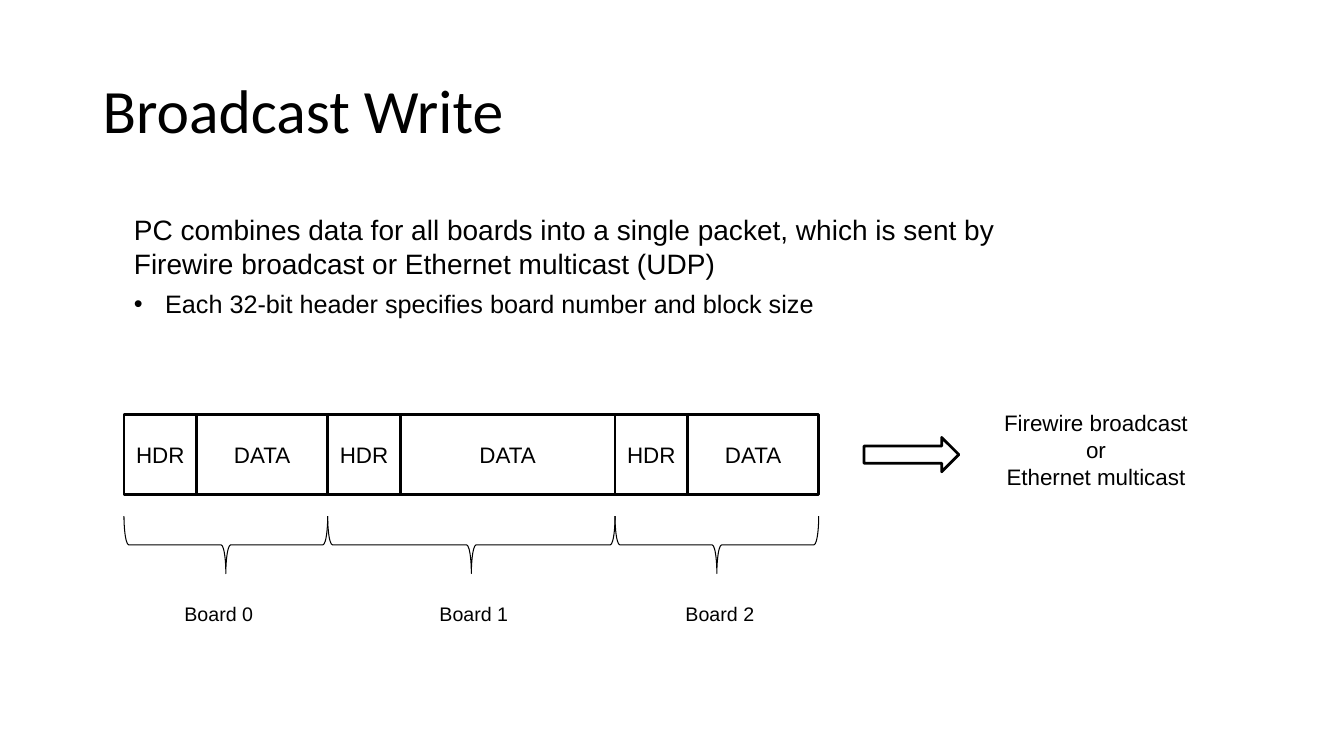
from dataclasses import dataclass

from lxml import etree
from pptx import Presentation
from pptx.dml.color import RGBColor
from pptx.enum.shapes import MSO_SHAPE
from pptx.enum.text import MSO_ANCHOR, PP_ALIGN
from pptx.oxml.ns import qn
from pptx.util import Pt

RECTANGLE, BRACE, ARROW = MSO_SHAPE.RECTANGLE, MSO_SHAPE.LEFT_BRACE, MSO_SHAPE.RIGHT_ARROW
LEFT, CENTER = PP_ALIGN.LEFT, PP_ALIGN.CENTER
TOP, MIDDLE = MSO_ANCHOR.TOP, MSO_ANCHOR.MIDDLE

TITLE = "Broadcast Write"
SUMMARY = (
    "PC combines data for all boards into a single packet, which is sent by "
    "Firewire broadcast or Ethernet multicast (UDP)"
)
DETAIL = "Each 32-bit header specifies board number and block size"
BOARDS = [
    {"name": "Board 0", "data_width": 130, "label_left": 173},
    {"name": "Board 1", "data_width": 213, "label_left": 426},
    {"name": "Board 2", "data_width": 130, "label_left": 670},
]
DESTINATION = ["Firewire broadcast", "or", "Ethernet multicast"]

PX = 9144
PAGE_WIDTH, PAGE_HEIGHT = 1333, 750
PACKET_LEFT, PACKET_TOP, PACKET_HEIGHT = 123, 411, 80
HEADER_WIDTH = 72
BRACE_TOP, BRACE_DEPTH = 512, 57
LABEL_TOP, LABEL_WIDTH, LABEL_HEIGHT = 592, 108, 34
BULLET_INDENT = 31


@dataclass(frozen=True)
class Theme:
    ink: RGBColor = RGBColor(0, 0, 0)
    paper: RGBColor = RGBColor(255, 255, 255)
    title_font: str = "Calibri"
    body_font: str = "Arial"
    title_size: int = 44
    summary_size: int = 20
    detail_size: int = 18
    packet_size: int = 16
    label_size: int = 14
    heavy_line: float = 2
    fine_line: float = 0.75


THEME = Theme()


def write(paragraph, text, size, font=THEME.body_font, align=LEFT, before=0, spacing=1.0):
    paragraph.alignment = align
    paragraph.space_before = Pt(before)
    paragraph.line_spacing = spacing
    span = paragraph.add_run()
    span.text = text
    span.font.size = Pt(size)
    span.font.name = font
    span.font.color.rgb = THEME.ink


def add_bullet(paragraph):
    properties = paragraph._p.get_or_add_pPr()
    properties.set("marL", str(BULLET_INDENT * PX))
    properties.set("indent", str(-BULLET_INDENT * PX))
    etree.SubElement(properties, qn("a:buFont"), typeface=THEME.body_font)
    etree.SubElement(properties, qn("a:buChar"), char="•")


def add_text(page, bounds, lines, size, anchor=TOP, **style):
    box = page.shapes.add_textbox(*(value * PX for value in bounds))
    frame = box.text_frame
    frame.word_wrap = True
    frame.vertical_anchor = anchor
    for index, line in enumerate(lines):
        paragraph = frame.add_paragraph() if index else frame.paragraphs[0]
        write(paragraph, line, size, **style)
    return frame


def add_outline(page, kind, bounds, weight, filled=True):
    shape = page.shapes.add_shape(kind, *(round(value * PX) for value in bounds))
    shape.shadow.inherit = False
    if filled:
        shape.fill.solid()
        shape.fill.fore_color.rgb = THEME.paper
    else:
        shape.fill.background()
    shape.line.color.rgb = THEME.ink
    shape.line.width = Pt(weight)
    return shape


def add_field(page, left, width, text):
    bounds = (left, PACKET_TOP, width, PACKET_HEIGHT)
    field = add_outline(page, RECTANGLE, bounds, THEME.heavy_line)
    frame = field.text_frame
    frame.word_wrap = True
    frame.vertical_anchor = MIDDLE
    frame.margin_left = frame.margin_right = 0
    write(frame.paragraphs[0], text, THEME.packet_size, align=CENTER)


def add_brace(page, left, width):
    center_x = left + width / 2
    center_y = BRACE_TOP + BRACE_DEPTH / 2
    bounds = (center_x - BRACE_DEPTH / 2, center_y - width / 2, BRACE_DEPTH, width)
    brace = add_outline(page, BRACE, bounds, THEME.fine_line, filled=False)
    brace.rotation = 270


def add_packet(page):
    left = PACKET_LEFT
    for board in BOARDS:
        add_field(page, left + HEADER_WIDTH, board["data_width"], "DATA")
        add_field(page, left, HEADER_WIDTH, "HDR")
        width = HEADER_WIDTH + board["data_width"]
        add_brace(page, left, width)
        label_bounds = (board["label_left"], LABEL_TOP, LABEL_WIDTH, LABEL_HEIGHT)
        add_text(page, label_bounds, [board["name"]], THEME.label_size)
        left += width


def main():
    deck = Presentation()
    deck.slide_width = PAGE_WIDTH * PX
    deck.slide_height = PAGE_HEIGHT * PX
    page = deck.slides.add_slide(deck.slide_layouts[6])
    add_text(page, (92, 40, 1150, 145), [TITLE], THEME.title_size,
             anchor=MIDDLE, font=THEME.title_font, spacing=0.9)
    summary = add_text(page, (PACKET_LEFT, 206, 899, 116), [SUMMARY], THEME.summary_size)
    detail = summary.add_paragraph()
    write(detail, DETAIL, THEME.detail_size, before=6)
    add_bullet(detail)
    add_packet(page)
    add_outline(page, ARROW, (857, 434, 94, 34), THEME.heavy_line)
    add_text(page, (951, 401, 272, 91), DESTINATION, THEME.packet_size, align=CENTER)
    deck.save("out.pptx")


if __name__ == "__main__":
    main()
